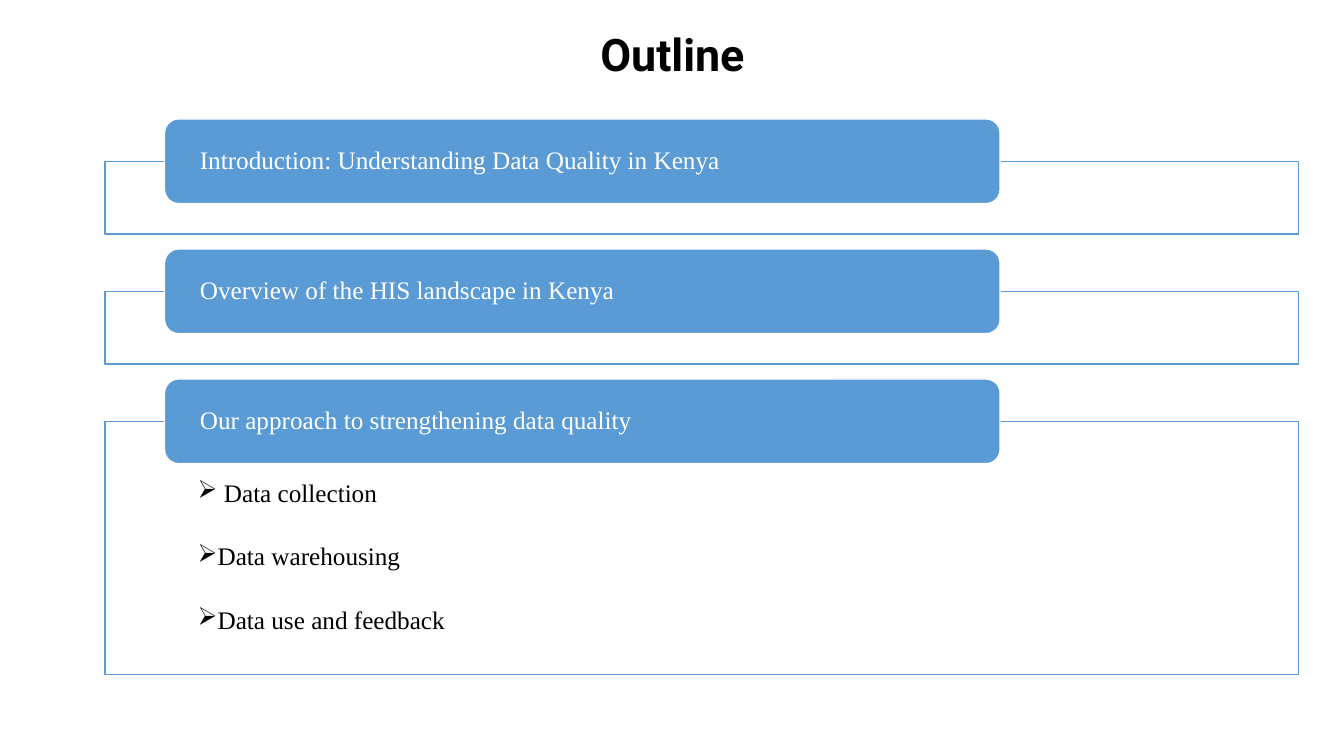
from lxml import etree
from pptx import Presentation
from pptx.dml.color import RGBColor
from pptx.enum.shapes import MSO_SHAPE as Shape
from pptx.enum.text import MSO_ANCHOR as Anchor, PP_ALIGN as Align
from pptx.oxml.ns import qn
from pptx.util import Inches, Pt

BLUE, WHITE, BLACK = "5B9BD5", "FFFFFF", "000000"
BODY_FONT = "Times New Roman"
HEADER_HEIGHT = 0.84
SECTION_GAP = 0.15
SECTIONS = [
    ("Introduction: Understanding Data Quality in Kenya", 0.72, []),
    ("Overview of the HIS landscape in Kenya", 0.72, []),
    ("Our approach to strengthening data quality", 2.51,
     [" Data collection", "Data warehousing", "Data use and feedback"]),
]


def rgb(value):
    return RGBColor.from_string(value)


def style_text(para, name, size, color, bold=False):
    para.line_spacing = 0.9
    font = para.font
    font.name, font.size, font.bold = name, Pt(size), bold
    font.color.rgb = rgb(color)


def set_margins(frame, left, top, right, bottom):
    frame.word_wrap = True
    frame.margin_left, frame.margin_top = Inches(left), Inches(top)
    frame.margin_right, frame.margin_bottom = Inches(right), Inches(bottom)


def add_box(page, kind, left, top, width, height, fill, line):
    box = page.shapes.add_shape(
        kind, Inches(left), Inches(top), Inches(width), Inches(height))
    box.shadow.inherit = False
    box.fill.solid()
    box.fill.fore_color.rgb = rgb(fill)
    box.line.color.rgb = rgb(line)
    box.line.width = Pt(1)
    return box


def add_arrow_bullet(para):
    props = para._p.get_or_add_pPr()
    props.set("marL", str(Inches(0.19)))
    props.set("indent", str(-Inches(0.19)))
    etree.SubElement(props, qn("a:buChar"), char="➢")


def add_title(page, left, top, width, height):
    box = page.shapes.add_textbox(
        Inches(left), Inches(top), Inches(width), Inches(height))
    frame = box.text_frame
    set_margins(frame, 0.1, 0.05, 0.1, 0.05)
    frame.vertical_anchor = Anchor.MIDDLE
    para = frame.paragraphs[0]
    para.text = "Outline"
    para.alignment = Align.CENTER
    style_text(para, "Roboto", 32, BLACK, bold=True)


def add_section(page, left, top, width, height, heading, points):
    """Place a framed panel whose header straddles its top edge."""
    panel = add_box(page, Shape.RECTANGLE, left, top, width, height, WHITE, BLUE)
    frame = panel.text_frame
    set_margins(frame, 0.92, 0.59, 0.92, 0.14)
    frame.vertical_anchor = Anchor.TOP
    for index, point in enumerate(points):
        para = frame.add_paragraph() if index else frame.paragraphs[0]
        para.text = point
        para.alignment = Align.LEFT
        add_arrow_bullet(para)
        para.space_after = Pt(25.7)
        style_text(para, BODY_FONT, 18, BLACK)

    header = add_box(page, Shape.ROUNDED_RECTANGLE, left + 0.05 * width,
                     top - HEADER_HEIGHT / 2, 0.7 * width, HEADER_HEIGHT,
                     BLUE, WHITE)
    set_margins(header.text_frame, 0.31, 0, 0.31, 0)
    header.text_frame.vertical_anchor = Anchor.MIDDLE
    para = header.text_frame.paragraphs[0]
    para.text = heading
    para.alignment = Align.LEFT
    style_text(para, BODY_FONT, 18, WHITE)


def main():
    deck = Presentation()
    deck.slide_width, deck.slide_height = Inches(13.33), Inches(7.5)
    page = deck.slides.add_slide(deck.slide_layouts[6])
    add_title(page, 0.92, 0.15, 11.5, 0.83)
    top = 1.6
    for heading, height, points in SECTIONS:
        add_section(page, 1.04, top, 11.84, height, heading, points)
        top += height + SECTION_GAP + HEADER_HEIGHT / 2
    deck.save("out.pptx")


if __name__ == "__main__":
    main()
